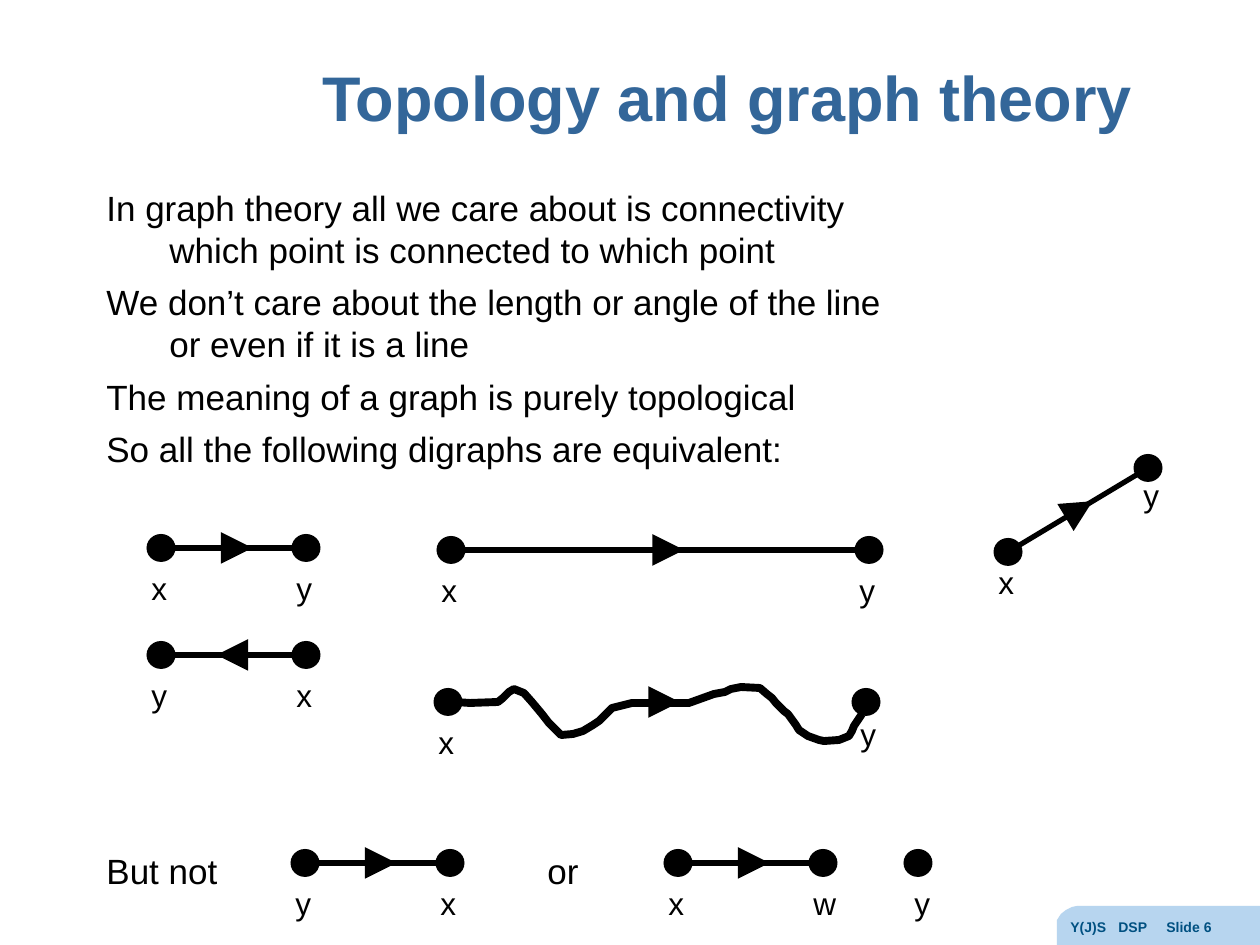
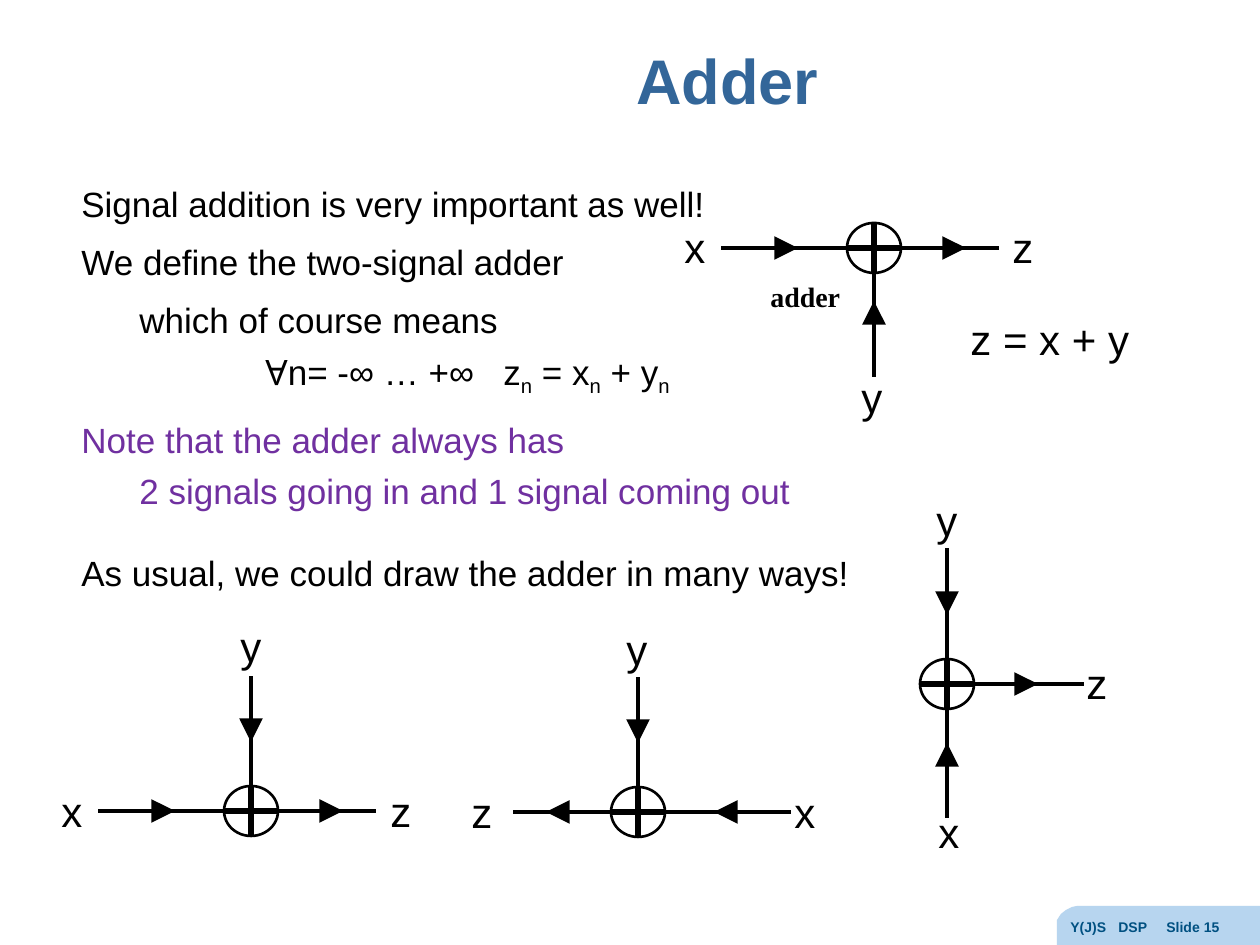
from dataclasses import dataclass
from math import hypot

from lxml.etree import SubElement
from pptx import Presentation
from pptx.dml.color import RGBColor
from pptx.enum.shapes import MSO_CONNECTOR as Connector, MSO_SHAPE as Shape
from pptx.enum.text import MSO_ANCHOR as Anchor, PP_ALIGN as Align
from pptx.oxml.ns import qn
from pptx.util import Pt

EMU_PER_PX = 914400 / 126
BLACK = RGBColor(0x00, 0x00, 0x00)
TITLE_BLUE = RGBColor(0x33, 0x66, 0x99)
BAND_BLUE = RGBColor(0xB7, 0xD5, 0xEF)
FOOTER_BLUE = RGBColor(0x00, 0x50, 0x81)
NOTE_PURPLE = RGBColor(0x70, 0x30, 0xA0)
SANS = "Arial"
SERIF = "Times New Roman"

LEFT, RIGHT, UP, DOWN = (-1, 0), (1, 0), (0, -1), (0, 1)
BAND_OUTLINE = [(1260, 906), (1260, 945), (1057, 945), (1057, 925), (1057, 920),
                (1061, 914), (1066, 910), (1072, 907), (1077, 906)]
WAVE = [(446, 698), (455, 702), (470, 703), (498, 702), (503, 698), (509, 692),
        (514, 689), (524, 693), (532, 702), (542, 714), (549, 723), (556, 730),
        (561, 735), (573, 734), (583, 731), (593, 725), (599, 721), (609, 711),
        (612, 708), (632, 703), (689, 703), (714, 694), (725, 692), (731, 689),
        (741, 687), (760, 688), (767, 694), (772, 698), (776, 703), (784, 711),
        (788, 714), (796, 725), (799, 730), (808, 736), (819, 740), (824, 741),
        (839, 740), (849, 736), (852, 731), (854, 726), (862, 714)]


@dataclass
class Node:
    x: int
    y: int
    label: str
    label_dx: int = -22
    label_dy: int = 15


@dataclass
class Arm:
    label: str
    direction: tuple
    length: int
    tip: int
    label_at: tuple


@dataclass
class Line:
    text: str
    before: int = 6
    color: RGBColor = BLACK


def px(length):
    return round(length * EMU_PER_PX)


def style(span, size, color=BLACK, font=SANS, bold=False):
    span.font.size = Pt(size)
    span.font.name = font
    span.font.bold = bold
    span.font.color.rgb = color


def set_tabs(para, stops):
    tab_list = SubElement(para._p.get_or_add_pPr(), qn("a:tabLst"))
    for stop in stops:
        SubElement(tab_list, qn("a:tab"), pos=str(px(stop)), algn="l")


def add_box(page, left, top, width, height):
    box = page.shapes.add_textbox(px(left), px(top), px(width), px(height))
    box.text_frame.word_wrap = True
    return box.text_frame


def add_label(page, text, left, top, size, width=60, font=SANS, bold=False):
    frame = add_box(page, left, top, width, 50)
    frame.text = text
    style(frame.paragraphs[0].runs[0], size, font=font, bold=bold)


def add_title(page, text, height):
    frame = add_box(page, 267, 23, 921, height)
    frame.vertical_anchor = Anchor.MIDDLE
    frame.text = text
    para = frame.paragraphs[0]
    para.alignment = Align.CENTER
    para.line_spacing = 0.9
    style(para.runs[0], 36, TITLE_BLUE, bold=True)


def add_body(page, lines, left, top, width, pitch, tabs=()):
    frame = add_box(page, left, top, width, 60 * len(lines))
    for index, line in enumerate(lines):
        para = frame.add_paragraph() if index else frame.paragraphs[0]
        para.line_spacing = Pt(pitch)
        para.space_before = Pt(line.before if index else 0)
        if tabs:
            set_tabs(para, tabs)
        for place, piece in enumerate(line.text.split("|")):
            if piece:
                span = para.add_run()
                span.text = piece
                style(span, 20, line.color)
                if place % 2:
                    span._r.get_or_add_rPr().set("baseline", "-25000")


def add_outline(page, points, closed):
    builder = page.shapes.build_freeform(*points[0], scale=EMU_PER_PX)
    builder.add_line_segments(points[1:], close=closed)
    outline = builder.convert_to_shape()
    outline.shadow.inherit = False
    return outline


def add_footer(page, number):
    band = add_outline(page, BAND_OUTLINE, True)
    band.fill.solid()
    band.fill.fore_color.rgb = BAND_BLUE
    band.line.fill.background()
    frame = add_box(page, 1058, 912, 202, 33)
    frame.text = f"Y(J)S\tDSP\tSlide {number}"
    para = frame.paragraphs[0]
    set_tabs(para, (48, 96))
    style(para.runs[0], 8, FOOTER_BLUE, bold=True)


def add_line(page, start, end, weight, arrow=False):
    line = page.shapes.add_connector(Connector.STRAIGHT, *map(px, (*start, *end)))
    line.line.color.rgb = BLACK
    line.line.width = Pt(weight)
    if arrow:
        SubElement(line.line._get_or_add_ln(), qn("a:tailEnd"), type="triangle")
    SubElement(line._element.spPr, qn("a:effectLst"))


def add_ellipse(page, x, y, width, height, filled):
    ellipse = page.shapes.add_shape(
        Shape.OVAL, px(x - width / 2), px(y - height / 2), px(width), px(height))
    ellipse.shadow.inherit = False
    if filled:
        ellipse.fill.solid()
        ellipse.fill.fore_color.rgb = BLACK
        ellipse.line.fill.background()
    else:
        ellipse.fill.background()
        ellipse.line.color.rgb = BLACK
        ellipse.line.width = Pt(1.5)


def add_node(page, node):
    add_ellipse(page, node.x, node.y, 29, 28, True)
    add_label(page, node.label, node.x + node.label_dx, node.y + node.label_dy, 18)


def add_digraph(page, source, target, lead=19):
    add_node(page, source)
    add_node(page, target)
    add_line(page, (source.x, source.y), (target.x, target.y), 3)
    run, rise = target.x - source.x, target.y - source.y
    length = hypot(run, rise)
    tail, tip = ((source.x + run * share, source.y + rise * share)
                 for share in (0.5 + (lead - 29) / length, 0.5 + lead / length))
    add_line(page, tail, tip, 6, arrow=True)


def add_wavy_digraph(page, source, target):
    add_node(page, source)
    add_node(page, target)
    add_line(page, (651, 702), (680, 702), 6, arrow=True)
    wave = add_outline(page, WAVE, False)
    wave.fill.background()
    wave.line.color.rgb = BLACK
    wave.line.width = Pt(4.5)


def add_adder(page, x, y, arms):
    def along(direction, distance):
        return x + direction[0] * distance, y + direction[1] * distance

    for arm in arms:
        add_line(page, (x, y), along(arm.direction, arm.length), 2.25)
        tail = arm.tip - 12 if arm.label == "z" else arm.tip + 12
        add_line(page, along(arm.direction, tail), along(arm.direction, arm.tip),
                 4.5, arrow=True)
        add_label(page, arm.label, *arm.label_at, 24)
    add_ellipse(page, x, y, 54, 50, False)
    add_line(page, (x, y - 26), (x, y + 26), 3)
    add_line(page, (x - 26, y), (x + 26, y), 3)


def new_page(deck, number):
    page = deck.slides.add_slide(deck.slide_layouts[6])
    add_footer(page, number)
    return page


def topology_page(deck):
    page = new_page(deck, 6)
    add_title(page, "Topology and graph theory", 157)
    add_body(page, [
        Line("In graph theory all we care about is connectivity"),
        Line("\twhich point is connected to which point", 0),
        Line("We don’t care about the length or angle of the line"),
        Line("\tor even if it is a line", 0),
        Line("The meaning of a graph is purely topological"),
        Line("So all the following digraphs are equivalent:"),
    ], 94, 180, 844, 24, (63,))
    for text, left in (("But not", 94), ("or", 535)):
        add_body(page, [Line(text)], left, 843, 160, 24)

    add_digraph(page, Node(161, 548, "x"), Node(306, 548, "y"))
    add_digraph(page, Node(451, 550, "x"), Node(869, 550, "y"), lead=24)
    add_digraph(page, Node(306, 655, "x"), Node(161, 655, "y"), lead=17)
    add_digraph(page, Node(1008, 552, "x", label_dy=5),
                Node(1148, 468, "y", -17, 2), lead=17)
    add_wavy_digraph(page, Node(448, 702, "x"), Node(866, 702, "y", -18, 7))
    add_digraph(page, Node(305, 863, "y"), Node(450, 863, "x"))
    add_digraph(page, Node(678, 863, "x"), Node(823, 863, "w"))
    add_node(page, Node(918, 863, "y", -16))


def adder_page(deck):
    page = new_page(deck, 15)
    add_title(page, "Adder", 122)
    add_body(page, [
        Line("Signal addition is very important as well!"),
        Line("We define the two-signal adder"),
        Line("\twhich of course means"),
        Line("\t\tⱯn= -∞ … +∞\tz|n| = x|n| + y|n|"),
        Line("Note that the adder always has", 9, NOTE_PURPLE),
        Line("\t2 signals going in and 1 signal coming out", 2, NOTE_PURPLE),
        Line("As usual, we could draw the adder in many ways!", 20),
    ], 69, 171, 1086, 27, (58, 184, 422))
    add_label(page, "adder", 758, 273, 16, width=103, font=SERIF, bold=True)
    add_label(page, "z = x + y", 958, 307, 24, width=208)

    add_adder(page, 874, 248, [Arm("x", LEFT, 153, 76, (672, 215)),
                               Arm("z", RIGHT, 125, 92, (1000, 215)),
                               Arm("y", DOWN, 129, 53, (849, 365))])
    add_adder(page, 251, 811, [Arm("x", LEFT, 153, 76, (49, 779)),
                               Arm("z", RIGHT, 125, 92, (378, 779)),
                               Arm("y", UP, 135, 69, (228, 614))])
    add_adder(page, 638, 812, [Arm("x", RIGHT, 153, 76, (782, 780)),
                               Arm("z", LEFT, 125, 92, (459, 780)),
                               Arm("y", UP, 135, 69, (614, 617))])
    add_adder(page, 947, 684, [Arm("x", DOWN, 134, 59, (926, 800)),
                               Arm("z", RIGHT, 137, 91, (1074, 651)),
                               Arm("y", UP, 136, 69, (924, 488))])


def main():
    deck = Presentation()
    deck.slide_width = px(1260)
    deck.slide_height = px(945)
    topology_page(deck)
    adder_page(deck)
    deck.save("out.pptx")


if __name__ == "__main__":
    main()
